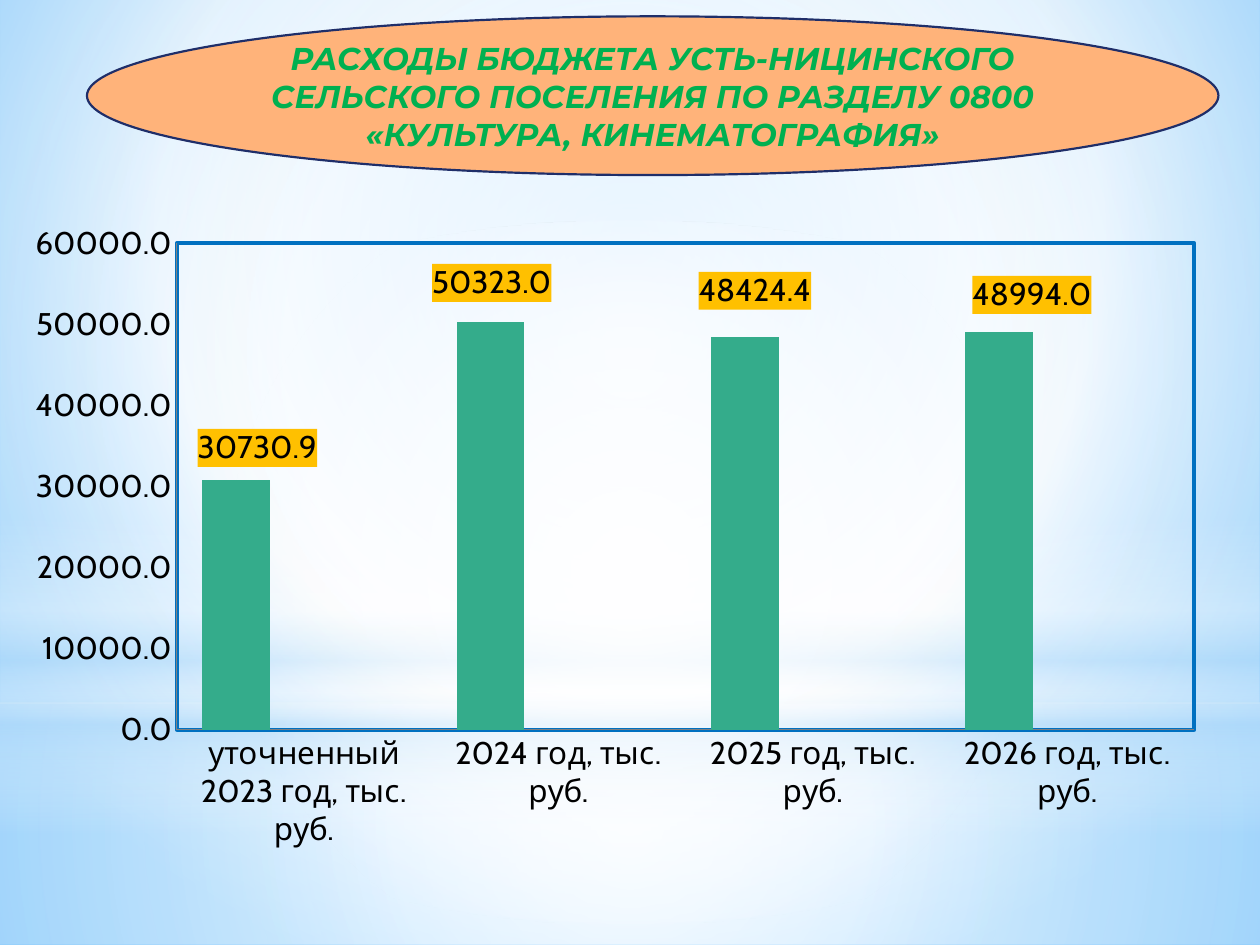
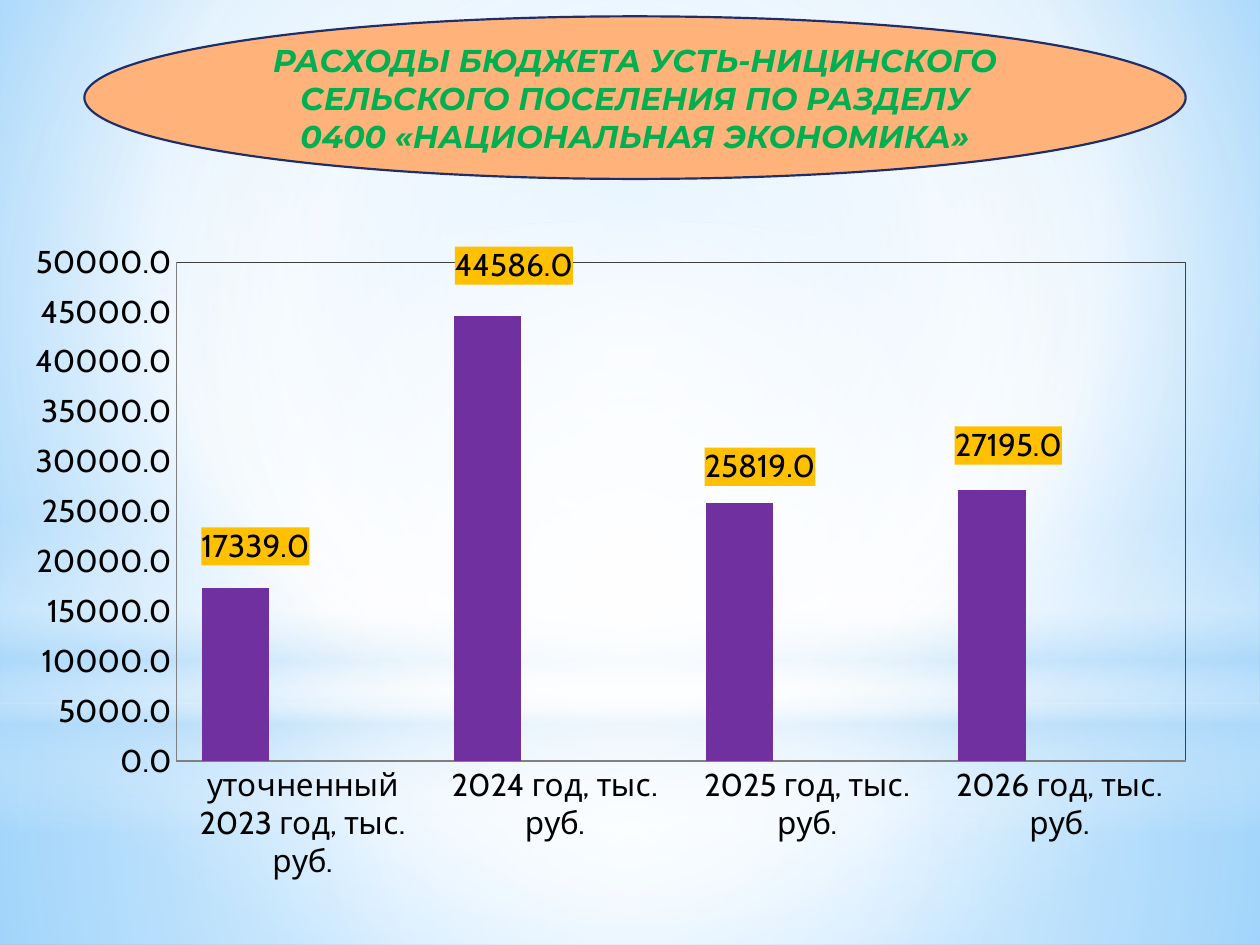
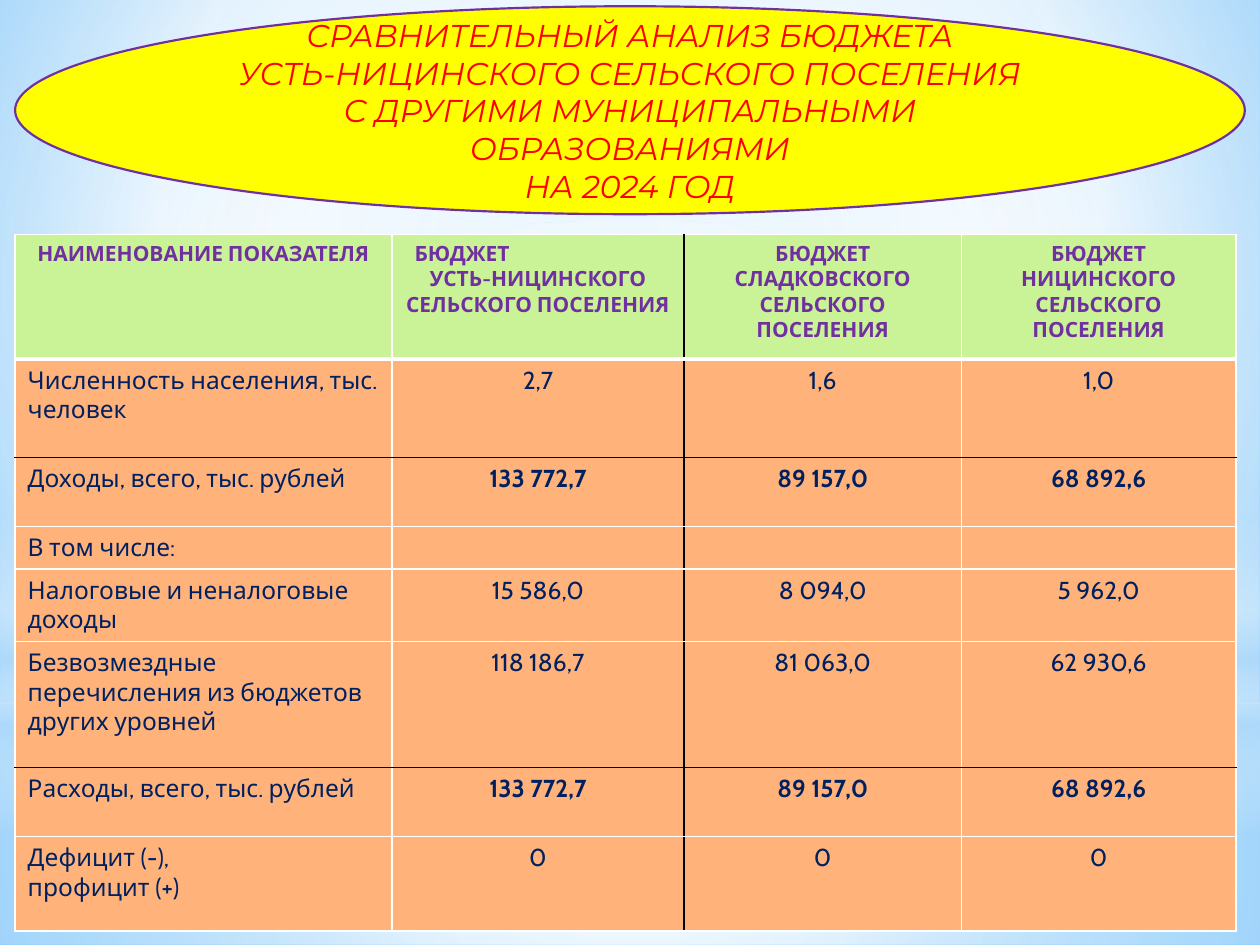
from dataclasses import dataclass

from lxml import etree
from pptx import Presentation
from pptx import oxml
from pptx import util as u
from pptx.chart import data as chart_data
from pptx.dml.color import RGBColor
from pptx.enum import chart as charts, shapes, text
from pptx.oxml import ns


@dataclass(frozen=True)
class Theme:
    title_font: str = "Montserrat"
    body_font: str = "Cabin"
    title_size: int = 18
    chart_size: int = 18
    head_size: int = 12
    cell_size: int = 14
    white: str = "FFFFFF"
    black: str = "000000"
    haze: str = "B4DCFA"
    peach: str = "FFB37A"
    yellow: str = "FFFF00"
    lime: str = "CAF297"
    amber: str = "FFC000"
    green: str = "00B050"
    red: str = "FF0000"
    purple: str = "7030A0"
    navy: str = "002060"
    outline: str = "1F2E69"
    teal: str = "34AC8B"
    blue: str = "0070C0"
    slate: str = "404040"
    gray: str = "808080"
    spare_series: tuple = ("5ECCF3", "A7EA52")


THEME = Theme()
ALIGN = text.PP_ALIGN
YEARS = ["уточненный 2023 год, тыс. руб."] + [
    f"{year} год, тыс. руб." for year in (2024, 2025, 2026)]
SECTION = "РАСХОДЫ БЮДЖЕТА УСТЬ-НИЦИНСКОГО СЕЛЬСКОГО ПОСЕЛЕНИЯ ПО РАЗДЕЛУ "
DRAWING_NS = ns.nsdecls("a")
CHART_NS = ns.nsdecls("c", "a")


def inches(box):
    return [u.Inches(length) for length in box]


def color(value):
    return RGBColor.from_string(value)


def solid(fill, value):
    fill.solid()
    fill.fore_color.rgb = color(value)


def stroke(line, value, points):
    solid(line.fill, value)
    line.width = u.Pt(points)


def write(frame, content, *, size, tint, font=THEME.body_font, bold=False,
          italic=False, align=ALIGN.CENTER, first_align=None, first_indent=0):
    """Fill a text frame, one paragraph for each line of content."""
    for number, line in enumerate(content.split("\n")):
        para = frame.add_paragraph() if number else frame.paragraphs[0]
        para.alignment = align
        if number == 0 and first_align is not None:
            para.alignment = first_align
            para._p.get_or_add_pPr().set("marL", str(u.Inches(first_indent)))
        if not line:
            etree.SubElement(para._p, ns.qn("a:endParaRPr"), sz=str(size * 100))
            continue
        span = para.add_run()
        span.text = line
        span.font.name, span.font.size = font, u.Pt(size)
        span.font.bold, span.font.italic = bold, italic
        span.font.color.rgb = color(tint)


# Shared background
def gradient(stops, focus=None, angle=90):
    """Make a gradient fill from (place, colour, opacity) stops."""
    marks = "".join(
        f'<a:gs pos="{place * 1000}"><a:srgbClr val="{value}">'
        f'<a:alpha val="{opacity * 1000}"/></a:srgbClr></a:gs>'
        for place, value, opacity in stops)
    if focus:
        sides = " ".join(f'{side}="{part * 1000}"' for side, part in zip("ltrb", focus))
        course = f'<a:path path="circle"><a:fillToRect {sides}/></a:path>'
    else:
        course = f'<a:lin ang="{angle * 60000}" scaled="0"/>'
    return oxml.parse_xml(f'<a:gradFill {DRAWING_NS} rotWithShape="1">'
                          f'<a:gsLst>{marks}</a:gsLst>{course}</a:gradFill>')


def add_backdrop(layout, page):
    """Give the layout its sky: a background and four translucent veils."""
    for holder in list(layout.placeholders):
        holder.element.getparent().remove(holder.element)
    layout.background.fill.solid()
    sky = layout.element.xpath("p:cSld/p:bg/p:bgPr")[0]
    sky.replace(sky[0], gradient([(0, "9ED5FF", 100), (60, THEME.white, 100),
                                  (100, "5BB9FF", 100)], (20, 10, 20, 60)))
    white, haze, middle = THEME.white, THEME.haze, (50,) * 4
    rect, oval = shapes.MSO_SHAPE.RECTANGLE, shapes.MSO_SHAPE.OVAL
    veils = [
        (rect, (0, 5.58, 10, 1.92), [(0, white, 91), (37, white, 76), (100, haze, 79)], middle),
        (rect, (0, 0, 10, 5.58), [(0, white, 89), (48, white, 62), (100, haze, 79)], middle),
        (rect, (0, 4.12, 10, 2.5), [(0, white, 0), (29, white, 30), (45, haze, 40),
                                    (55, white, 26), (65, haze, 60), (100, white, 0)], None),
        (oval, (0, 1.75, 10, 5.58), [(0, white, 100), (56, white, 0)], middle),
    ]
    tree = layout.element.xpath("p:cSld/p:spTree")[0]
    for kind, box, stops, focus in veils:
        veil = page.shapes.add_shape(kind, *inches(box))
        veil.shadow.inherit = False
        veil.line.fill.background()
        solid(veil.fill, white)
        plain = veil.element.xpath("p:spPr/a:solidFill")[0]
        plain.getparent().replace(plain, gradient(stops, focus))
        tree.append(veil.element)


# Title ellipse
def add_title(page, box, content, fill, line, **style):
    oval = page.shapes.add_shape(shapes.MSO_SHAPE.OVAL, *inches(box))
    oval.shadow.inherit = False
    solid(oval.fill, fill)
    stroke(oval.line, line, 1.25)
    oval.text_frame.word_wrap = True
    oval.text_frame.vertical_anchor = text.MSO_ANCHOR.MIDDLE
    write(oval.text_frame, content, font=THEME.title_font, size=THEME.title_size,
          italic=True, **style)


# Column chart
def manual_layout(lengths, size, **modes):
    """Turn lengths in inches into shares of the chart's size."""
    shares = {name: round(length / whole, 4)
              for name, length, whole in zip("xywh", lengths, size * 2)}
    fields = "".join(f'<c:{name} val="{value}"/>'
                     for name, value in (modes | shares).items())
    return oxml.parse_xml(f"<c:layout {CHART_NS}><c:manualLayout>{fields}"
                          "</c:manualLayout></c:layout>")


def style_label(series, index, shift, size):
    """Give one value label its amber plate and move it by shift inches."""
    label = series.points[index].data_label
    label.font.name, label.font.size = THEME.body_font, u.Pt(THEME.chart_size)
    label.font.color.rgb = color(THEME.black)
    label.position = charts.XL_LABEL_POSITION.OUTSIDE_END
    node = series._element.xpath(f"c:dLbls/c:dLbl[c:idx/@val={index}]")[0]
    plate = oxml.parse_xml(f'<c:spPr {CHART_NS}><a:solidFill><a:srgbClr '
                           f'val="{THEME.amber}"/></a:solidFill></c:spPr>')
    number = oxml.parse_xml(f'<c:numFmt {CHART_NS} formatCode="0.0" sourceLinked="0"/>')
    for old in node.xpath("c:layout|c:numFmt|c:spPr"):
        node.remove(old)
    for place, part in enumerate((manual_layout(shift, size), number, plate), 1):
        node.insert(place, part)


def add_columns(page, box, values, shifts, top, step, tint, plot_box, frame):
    source = chart_data.CategoryChartData(number_format="0.0")
    source.categories = YEARS
    source.add_series("Series 1", values)
    for number in (2, 3):
        source.add_series(f"Series {number}", [None] * len(YEARS))
    chart = page.shapes.add_chart(charts.XL_CHART_TYPE.COLUMN_CLUSTERED,
                                  *inches(box), source).chart
    chart.has_legend = chart.has_title = False
    chart.font.name, chart.font.size = THEME.body_font, u.Pt(THEME.chart_size)
    chart.font.color.rgb = color(THEME.black)

    # Columns and their labels, without leader lines
    plot = chart.plots[0]
    plot.gap_width, plot.vary_by_categories = 75, False
    for series, fill in zip(plot.series, (tint, *THEME.spare_series)):
        solid(series.format.fill, fill)
    for index, shift in enumerate(shifts):
        style_label(plot.series[0], index, shift, box[2:])
    for leader in chart.element.xpath(".//c:dLbls/c:showLeaderLines"):
        leader.set("val", "0")

    # Axes
    for axis in (chart.category_axis, chart.value_axis):
        axis.has_major_gridlines = False
        axis.major_tick_mark = axis.minor_tick_mark = charts.XL_TICK_MARK.NONE
        stroke(axis.format.line, THEME.gray, 0.75)
    scale = chart.value_axis
    scale.minimum_scale, scale.maximum_scale, scale.major_unit = 0, top, step
    scale.tick_labels.number_format = "0.0"
    scale.tick_labels.number_format_is_linked = False

    # Plot area and its frame
    area = chart.element.xpath("c:chart/c:plotArea")[0]
    for old in area.xpath("c:layout"):
        area.remove(old)
    area.insert(0, manual_layout(plot_box, box[2:], layoutTarget="inner",
                                 xMode="edge", yMode="edge"))
    line, points = frame
    area.append(oxml.parse_xml(
        f'<c:spPr {CHART_NS}><a:noFill/><a:ln w="{u.Pt(points)}"><a:solidFill>'
        f'<a:srgbClr val="{line}"/></a:solidFill></a:ln></c:spPr>'))


def chart_slide(page, title, title_box, **chart):
    add_columns(page, **chart)
    add_title(page, title_box, SECTION + title, THEME.peach, THEME.outline,
              tint=THEME.green, bold=True)


# Comparison table
HEADS = ["НАИМЕНОВАНИЕ ПОКАЗАТЕЛЯ",
         "БЮДЖЕТ\nУСТЬ-НИЦИНСКОГО СЕЛЬСКОГО ПОСЕЛЕНИЯ",
         "БЮДЖЕТ СЛАДКОВСКОГО СЕЛЬСКОГО ПОСЕЛЕНИЯ",
         "БЮДЖЕТ НИЦИНСКОГО СЕЛЬСКОГО ПОСЕЛЕНИЯ"]
TOTALS = ["133 772,7", "89 157,0", "68 892,6"]
ROWS = [
    HEADS,
    ["Численность населения, тыс. человек", "2,7", "1,6", "1,0"],
    ["Доходы, всего, тыс. рублей", *TOTALS],
    ["В том числе:", "", "", ""],
    ["Налоговые и неналоговые доходы", "15 586,0", "8 094,0", "5 962,0"],
    ["Безвозмездные перечисления из бюджетов других уровней",
     "118 186,7", "81 063,0", "62 930,6"],
    ["Расходы, всего, тыс. рублей", *TOTALS],
    ["Дефицит (-),\nпрофицит (+)", "0", "0", "0"],
]
COLUMN_WIDTHS = [2.99, 2.32, 2.2, 2.18]
ROW_HEIGHTS = [0.99, 0.78, 0.55, 0.33, 0.57, 1, 0.55, 0.75]
TOTAL_ROWS = (2, 6)


def set_borders(cell, row, column):
    """Black rules stand above the totals and right of the second column."""
    black_sides = {"L": column == 2, "R": column == 1,
                   "T": row in TOTAL_ROWS, "B": row + 1 in TOTAL_ROWS}
    thick_side = {0: "B", 1: "T"}.get(row)
    holder = cell._tc.get_or_add_tcPr()
    for place, (side, is_black) in enumerate(black_sides.items()):
        width = u.Pt(3 if side == thick_side else 1)
        value = THEME.black if is_black else THEME.white
        holder.insert(place, oxml.parse_xml(
            f'<a:ln{side} {DRAWING_NS} w="{width}"><a:solidFill>'
            f'<a:srgbClr val="{value}"/></a:solidFill></a:ln{side}>'))


def add_comparison(page, box):
    table = page.shapes.add_table(len(ROWS), len(HEADS), *inches(box)).table
    table.first_row = table.horz_banding = False
    for column, width in zip(table.columns, COLUMN_WIDTHS):
        column.width = u.Inches(width)
    for row, height in zip(table.rows, ROW_HEIGHTS):
        row.height = u.Inches(height)
    for row, entries in enumerate(ROWS):
        for column, entry in enumerate(entries):
            cell = table.cell(row, column)
            solid(cell.fill, THEME.peach if row else THEME.lime)
            set_borders(cell, row, column)
            if row == 0:
                style = dict(size=THEME.head_size, tint=THEME.purple, bold=True)
                if "\n" in entry:
                    style.update(first_align=ALIGN.LEFT, first_indent=0.08)
            else:
                style = dict(size=THEME.cell_size, tint=THEME.navy,
                             bold=row in TOTAL_ROWS and column > 0,
                             align=ALIGN.CENTER if column else ALIGN.LEFT)
            write(cell.text_frame, entry, **style)


def comparison_slide(page):
    add_comparison(page, (0.12, 1.86, 9.69, 5.52))
    add_title(page, (0.12, 0.05, 9.76, 1.65),
              "СРАВНИТЕЛЬНЫЙ АНАЛИЗ БЮДЖЕТА\n"
              "УСТЬ-НИЦИНСКОГО СЕЛЬСКОГО ПОСЕЛЕНИЯ\n"
              "С ДРУГИМИ МУНИЦИПАЛЬНЫМИ ОБРАЗОВАНИЯМИ\nНА 2024 ГОД",
              THEME.yellow, THEME.purple, tint=THEME.red)


def main():
    deck = Presentation()
    deck.slide_width, deck.slide_height = u.Inches(10), u.Inches(7.5)
    blank = deck.slide_layouts[6]
    culture, economy, comparison = [deck.slides.add_slide(blank) for _ in range(3)]
    add_backdrop(blank, culture)

    chart_slide(culture, "0800 «КУЛЬТУРА, КИНЕМАТОГРАФИЯ»", (0.69, 0.13, 8.98, 1.26),
                box=(0.28, 1.78, 9.29, 4.95), values=[30730.9, 50323, 48424.4, 48994],
                shifts=[(0.17, -0.07), (0.01, -0.12), (0.08, -0.18), (0.26, -0.11)],
                top=60000, step=10000, tint=THEME.teal,
                plot_box=(1.1, 0.14, 8.1, 3.89), frame=(THEME.blue, 2.25))
    chart_slide(economy, "0400 «НАЦИОНАЛЬНАЯ ЭКОНОМИКА»", (0.67, 0.13, 8.74, 1.29),
                box=(0.28, 1.86, 9.21, 5.3), values=[17339, 44586, 25819, 27195],
                shifts=[(0.16, -0.14), (0.21, -0.21), (0.16, -0.1), (0.13, -0.16)],
                top=50000, step=5000, tint=THEME.purple,
                plot_box=(1.1, 0.22, 8.03, 3.96), frame=(THEME.slate, 0.25))
    comparison_slide(comparison)
    deck.save("out.pptx")


if __name__ == "__main__":
    main()
